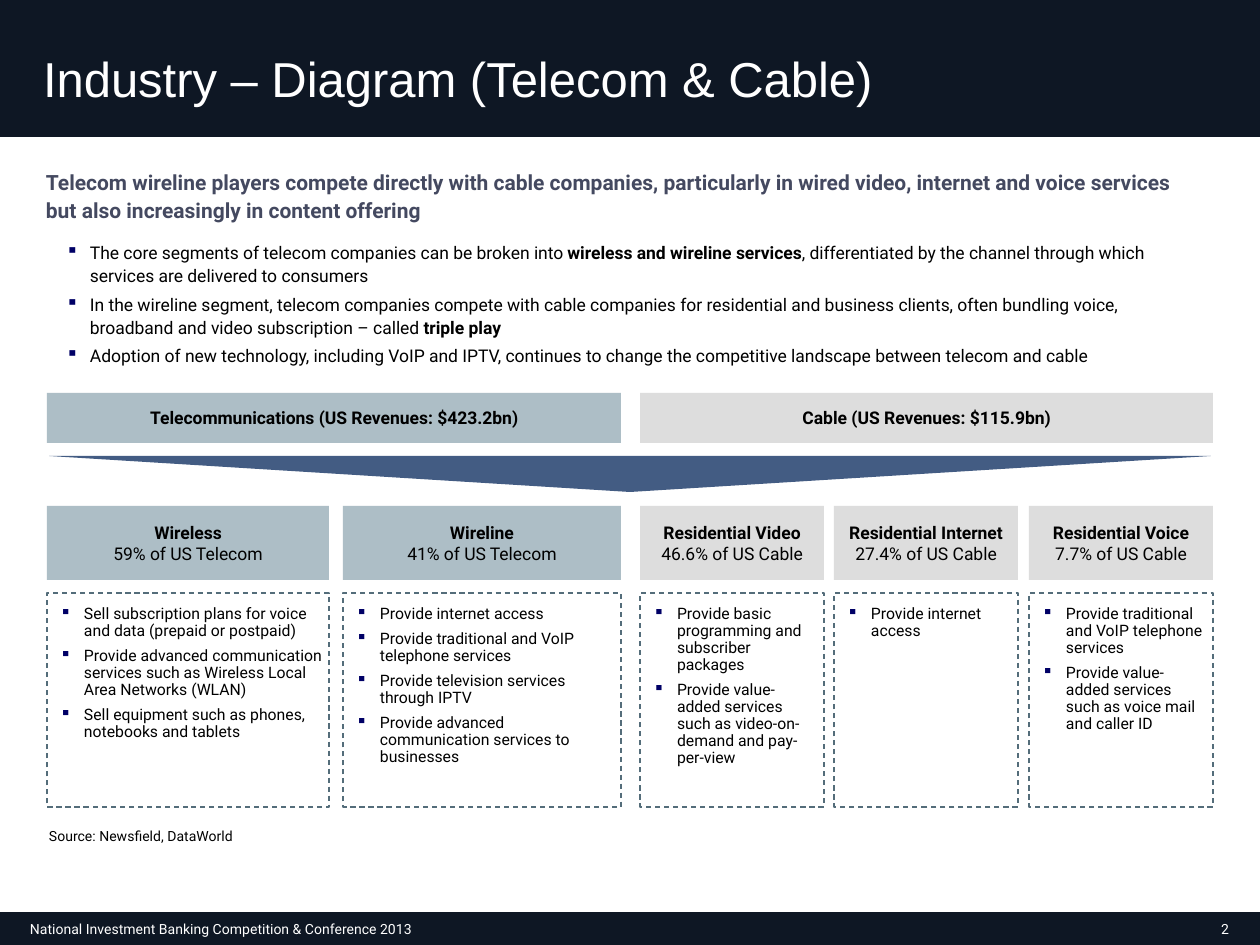
"""Builds the telecom and cable industry diagram slide."""
import pptx
import pptx.dml.color
import pptx.enum.dml
import pptx.enum.shapes
import pptx.enum.text
import pptx.util
from lxml import etree

SCALE = 914400 / 126
NAVY, STEEL, GREY, BLUE = "0E1724", "ADBEC6", "DDDDDD", "435C83"
SHAPE = pptx.enum.shapes.MSO_SHAPE
ALIGN = pptx.enum.text.PP_ALIGN
ANCHOR = pptx.enum.text.MSO_ANCHOR

COLUMNS = [
    (47, 282, STEEL, ["*Wireless*", "59% of US Telecom"], [
        "Sell subscription plans for voice and data (prepaid or postpaid)",
        "Provide advanced communication services such as Wireless Local Area Networks (WLAN)",
        "Sell equipment such as phones, notebooks and tablets"]),
    (343, 278, STEEL, ["*Wireline*", "41% of US Telecom"], [
        "Provide internet access",
        "Provide traditional and VoIP telephone services",
        "Provide television services through IPTV",
        "Provide advanced communication services to businesses"]),
    (640, 184, GREY, ["*Residential Video*", "46.6% of US Cable"], [
        "Provide basic programming and subscriber packages",
        "Provide value-added services such as video-on-demand and pay-per-view"]),
    (834, 184, GREY, ["*Residential Internet*", "27.4% of US Cable"], [
        "Provide internet access"]),
    (1029, 184, GREY, ["*Residential Voice*", "7.7% of US Cable"], [
        "Provide traditional and VoIP telephone services",
        "Provide value-added services such as voice mail and caller ID"]),
]
POINTS = [
    "The core segments of telecom companies can be broken into *wireless and wireline services*, "
    "differentiated by the channel through which services are delivered to consumers",
    "In the wireline segment, telecom companies compete with cable companies for residential and "
    "business clients, often bundling voice, broadband and video subscription – called *triple play*",
    "Adoption of new technology, including VoIP and IPTV, continues to change the competitive "
    "landscape between telecom and cable",
]


def px(*nums):
    return [pptx.util.Emu(round(n * SCALE)) for n in nums]


def color(code):
    return pptx.dml.color.RGBColor.from_string(code)


def bullet(para):
    props = para._p.get_or_add_pPr()
    indent = px(24)[0]
    props.set("marL", str(indent))
    props.set("indent", str(-indent))
    tint = etree.SubElement(props, pptx.oxml.ns.qn("a:buClr"))
    etree.SubElement(tint, pptx.oxml.ns.qn("a:srgbClr"), val="000066")
    etree.SubElement(props, pptx.oxml.ns.qn("a:buChar"), char="▪")


def write(shape, lines, size=10, font="Roboto", ink="000000", align=ALIGN.LEFT,
          anchor=ANCHOR.TOP, pad=(0, 0, 0, 0), wrap=True, lead=1.0, after=0, dots=False):
    frame = shape.text_frame
    frame.auto_size = pptx.enum.text.MSO_AUTO_SIZE.NONE
    frame.word_wrap = wrap
    frame.vertical_anchor = anchor
    (frame.margin_left, frame.margin_top,
     frame.margin_right, frame.margin_bottom) = px(*pad)
    for num, line in enumerate(lines):
        para = frame.add_paragraph() if num else frame.paragraphs[0]
        para.alignment = align
        para.line_spacing = lead
        para.space_before = pptx.util.Pt(0)
        para.space_after = pptx.util.Pt(after)
        if dots:
            bullet(para)
        for part, text in enumerate(line.split("*")):
            if text:
                run = para.add_run()
                run.text = text
                run.font.size = pptx.util.Pt(size)
                run.font.name = font
                run.font.bold = part % 2 == 1
                run.font.color.rgb = color(ink)


def label(slide, box, lines, **style):
    write(slide.shapes.add_textbox(*px(*box)), lines, **style)


def block(slide, box, fill, kind=SHAPE.RECTANGLE):
    shape = slide.shapes.add_shape(kind, *px(*box))
    shape.shadow.inherit = False
    shape.fill.solid()
    shape.fill.fore_color.rgb = color(fill)
    shape.line.fill.background()
    return shape


def header(slide, box, fill, lines):
    write(block(slide, box, fill), lines, align=ALIGN.CENTER,
          anchor=ANCHOR.MIDDLE, wrap=False)


def detail(slide, box, lines):
    shape = slide.shapes.add_shape(SHAPE.RECTANGLE, *px(*box))
    shape.shadow.inherit = False
    shape.fill.background()
    shape.line.color.rgb = color("546D7A")
    shape.line.width = pptx.util.Pt(0.75)
    shape.line.dash_style = pptx.enum.dml.MSO_LINE.DASH
    write(shape, lines, size=9, pad=(13, 13, 6, 13), lead=0.9, after=4.5, dots=True)


def frame(slide):
    band = block(slide, (0, 0, 1260, 137), NAVY)
    block(slide, (0, 912, 1260, 33), NAVY)
    title = slide.shapes.title
    band.element.addnext(title.element)
    title.left, title.top, title.width, title.height = px(30, 36, 1190, 83)
    write(title, ["Industry – Diagram (Telecom & Cable)"], size=28, font="Arial",
          ink="FFFFFF", anchor=ANCHOR.MIDDLE, pad=(13, 6, 13, 6))
    label(slide, (30, 920, 567, 17), ["National Investment Banking Competition & Conference 2013"],
          size=8, ink="FFFFFF", anchor=ANCHOR.MIDDLE)
    label(slide, (980, 912, 262, 33), ["2"], size=8, ink="FFFFFF", align=ALIGN.RIGHT,
          anchor=ANCHOR.MIDDLE, pad=(13, 6, 13, 6))


def main():
    deck = pptx.Presentation()
    deck.slide_width, deck.slide_height = px(1260, 945)
    slide = deck.slides.add_slide(deck.slide_layouts[5])
    frame(slide)
    label(slide, (33, 160, 1162, 70),
          ["*Telecom wireline players compete directly with cable companies, particularly in wired "
           "video, internet and voice services but also increasingly in content offering*"],
          size=12, ink="444960", anchor=ANCHOR.MIDDLE, pad=(13, 6, 13, 6), lead=1.1, after=1)
    label(slide, (53, 236, 1159, 135), POINTS, pad=(13, 4, 13, 4), lead=1.1, after=3, dots=True)
    header(slide, (47, 393, 574, 50), STEEL, ["*Telecommunications (US Revenues: $423.2bn)*"])
    header(slide, (640, 393, 573, 50), GREY, ["*Cable (US Revenues: $115.9bn)*"])
    block(slide, (49, 456, 1162, 36), BLUE, SHAPE.ISOSCELES_TRIANGLE).rotation = 180
    for left, width, fill, head, items in COLUMNS:
        header(slide, (left, 506, width, 74), fill, head)
        detail(slide, (left, 593, width, 214), items)
    label(slide, (49, 813, 1159, 36), ["Source: Newsfield, DataWorld"],
          size=8, pad=(0, 13, 0, 13), lead=1.1, after=8)
    deck.save("out.pptx")


if __name__ == "__main__":
    main()
